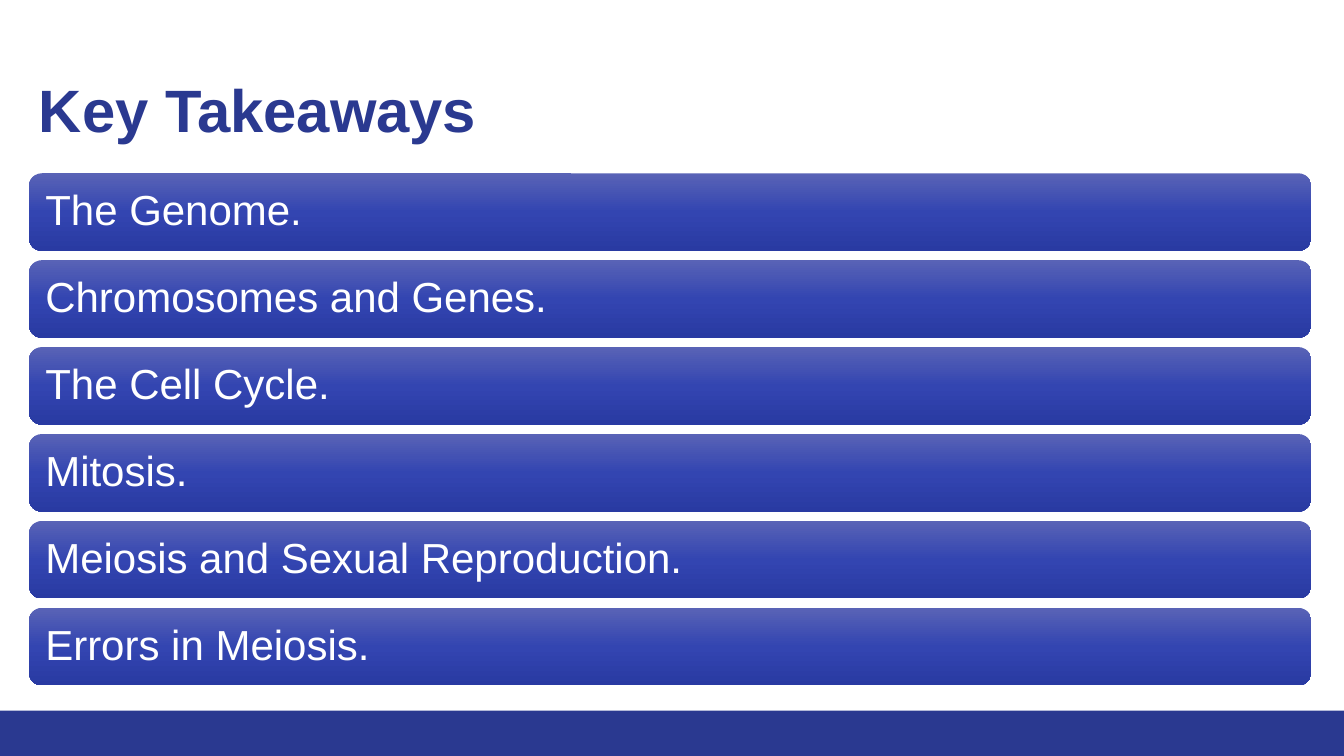
import copy

import pptx
import pptx.dml.color
import pptx.enum.shapes
import pptx.enum.text
import pptx.oxml.ns
import pptx.util

Pt = pptx.util.Pt
RGBColor = pptx.dml.color.RGBColor
SHAPE = pptx.enum.shapes.MSO_SHAPE

TITLE = "Key Takeaways"
TAKEAWAYS = [
    "The Genome.",
    "Chromosomes and Genes.",
    "The Cell Cycle.",
    "Mitosis.",
    "Meiosis and Sexual Reproduction.",
    "Errors in Meiosis.",
]

NAVY = RGBColor(0x2A, 0x39, 0x90)
WHITE = RGBColor(0xFF, 0xFF, 0xFF)
BAR_GRADIENT = [
    (0, RGBColor(0x59, 0x63, 0xB6)),
    (0.5, RGBColor(0x33, 0x45, 0xB1)),
    (1, RGBColor(0x29, 0x3A, 0xA2)),
]

SLIDE_W, SLIDE_H = 960, 540
FOOTER_H = 32.4
LEFT = 20.7
BAR_TOP, BAR_W, BAR_H, BAR_PITCH = 123.8, 916, 55.4, 62.08


def add_text(sp, text, size, color, bold=False, inset=7.2):
    tf = sp.text_frame
    tf.word_wrap = True
    tf.vertical_anchor = pptx.enum.text.MSO_ANCHOR.MIDDLE
    tf.margin_left = tf.margin_right = Pt(inset)
    tf.margin_top = tf.margin_bottom = Pt(inset)
    p = tf.paragraphs[0]
    p.alignment = pptx.enum.text.PP_ALIGN.LEFT
    p.line_spacing = 0.9
    r = p.add_run()
    r.text = text
    r.font.name = "Arial"
    r.font.size = Pt(size)
    r.font.bold = bold
    r.font.color.rgb = color


def add_block(s, kind, x, y, w, h):
    sp = s.shapes.add_shape(kind, Pt(x), Pt(y), Pt(w), Pt(h))
    sp.shadow.inherit = False
    sp.line.fill.background()
    return sp


def fill_gradient(sp, colors):
    sp.fill.gradient()
    sp.fill.gradient_angle = 270
    stops = sp._element.spPr.find(".//" + pptx.oxml.ns.qn("a:gsLst"))
    stops.append(copy.deepcopy(stops[-1]))
    for stop, (position, color) in zip(sp.fill.gradient_stops, colors):
        stop.position = position
        stop.color.rgb = color


def main():
    prs = pptx.Presentation()
    prs.slide_width, prs.slide_height = Pt(SLIDE_W), Pt(SLIDE_H)
    s = prs.slides.add_slide(prs.slide_layouts[6])

    footer = add_block(s, SHAPE.RECTANGLE, 0, SLIDE_H - FOOTER_H, SLIDE_W, FOOTER_H)
    footer.fill.solid()
    footer.fill.fore_color.rgb = NAVY

    title = s.shapes.add_textbox(Pt(LEFT), Pt(28.8), Pt(913.7), Pt(104.4))
    add_text(title, TITLE, size=42.7, color=NAVY, bold=True)

    for i, takeaway in enumerate(TAKEAWAYS):
        bar = add_block(s, SHAPE.ROUNDED_RECTANGLE, LEFT, BAR_TOP + i * BAR_PITCH, BAR_W, BAR_H)
        fill_gradient(bar, BAR_GRADIENT)
        add_text(bar, takeaway, size=30, color=WHITE, inset=9)

    prs.save("out.pptx")


if __name__ == "__main__":
    main()
